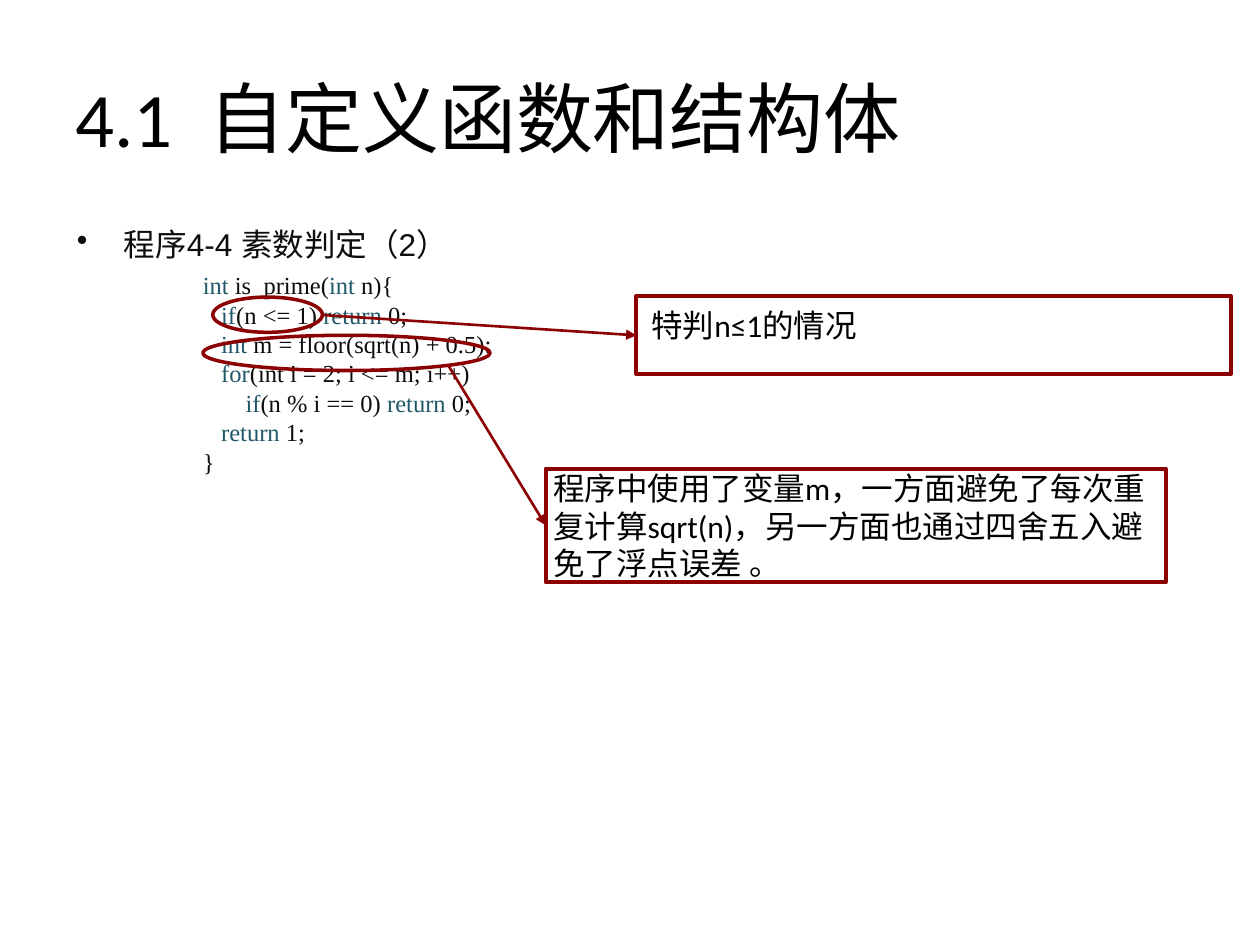
import pptx
import pptx.util
import pptx.dml.color
import pptx.enum.shapes
import pptx.enum.text
import pptx.oxml
import pptx.oxml.ns
from pptx.util import Cm

BLACK, INK, KEYWORD, MARK = "000000", "0D0D0D", "215968", "8C0202"

# Each code line: left margin in cm, then (text, colour) spans
CODE = [
    (2.54, [("int ", KEYWORD), ("is_prime(", INK), ("int", KEYWORD), (" n){", INK)]),
    (2.91, [("if", KEYWORD), ("(n <= 1) ", INK), ("return", KEYWORD), (" 0;", INK)]),
    (2.91, [("int ", KEYWORD), ("m = floor(sqrt(n) + 0.5);", INK)]),
    (2.91, [("for", KEYWORD), ("(int i = 2; i <= m; i++)", INK)]),
    (3.4, [("if", KEYWORD), ("(n % i == 0) ", INK), ("return", KEYWORD), (" 0;", INK)]),
    (2.91, [("return ", KEYWORD), ("1;", INK)]),
    (2.54, [("}", INK)]),
]


def colour(value):
    return pptx.dml.color.RGBColor.from_string(value)


def format_span(span, font, size, value):
    span.font.name = font
    span.font.size = pptx.util.Pt(size)
    span.font.color.rgb = colour(value)


def add_child(parent, tag, **attributes):
    child = pptx.oxml.ns.qn(tag)
    element = parent.makeelement(child, attributes)
    parent.append(element)
    return element


def set_indent(para, left, first=0):
    properties = para._p.get_or_add_pPr()
    properties.set("marL", str(Cm(left)))
    properties.set("indent", str(Cm(first)))
    return properties


def set_title(page, text):
    title = page.shapes.title
    title.left, title.top, title.width, title.height = Cm(1.27), Cm(0.76), Cm(22.86), Cm(3.18)
    title.text_frame.text = text
    title.text_frame.vertical_anchor = pptx.enum.text.MSO_ANCHOR.MIDDLE
    para = title.text_frame.paragraphs[0]
    para.alignment = pptx.enum.text.PP_ALIGN.LEFT
    format_span(para.runs[0], "Calibri", 44, BLACK)


def add_listing(page, heading, code):
    box = page.shapes.add_textbox(Cm(1.3), Cm(4.42), Cm(22.86), Cm(12.57))
    frame = box.text_frame
    frame.word_wrap = True
    # Bulleted heading
    frame.text = heading
    para = frame.paragraphs[0]
    format_span(para.runs[0], "Arial", 18, INK)
    add_child(set_indent(para, 0.95, -0.95), "a:buChar", char="•")
    # Code lines
    for number, (left, spans) in enumerate(code):
        para = frame.add_paragraph()
        para.line_spacing = pptx.util.Pt(16.8)
        para.space_before = pptx.util.Pt(0 if number else 4)
        set_indent(para, left)
        for text, value in spans:
            span = para.add_run()
            span.text = text
            format_span(span, "Times New Roman", 14, value)


def add_outline(page, kind, place, weight):
    shape = page.shapes.add_shape(kind, *[Cm(length) for length in place])
    shape.shadow.inherit = False
    shape.fill.background()
    shape.line.color.rgb = colour(MARK)
    shape.line.width = pptx.util.Pt(weight)
    return shape


def add_arrow(page, start, end):
    arrow = page.shapes.add_connector(
        pptx.enum.shapes.MSO_CONNECTOR.STRAIGHT, *[Cm(length) for length in start + end])
    arrow.line.color.rgb = colour(MARK)
    arrow.line.width = pptx.util.Pt(1.5)
    add_child(arrow.line._get_or_add_ln(), "a:tailEnd", type="triangle")
    add_child(arrow._element.spPr, "a:effectLst")


def add_note(page, text, place, side, top):
    box = add_outline(page, pptx.enum.shapes.MSO_SHAPE.RECTANGLE, place, 2.25)
    frame = box.text_frame
    frame.word_wrap = True
    frame.vertical_anchor = pptx.enum.text.MSO_ANCHOR.TOP
    frame.margin_left = frame.margin_right = Cm(side)
    frame.margin_top, frame.margin_bottom = Cm(top), Cm(0)
    frame.text = text
    para = frame.paragraphs[0]
    para.alignment = pptx.enum.text.PP_ALIGN.LEFT
    format_span(para.runs[0], "Calibri", 18, BLACK)


def main():
    deck = pptx.Presentation()
    deck.slide_width, deck.slide_height = Cm(25.4), Cm(19.05)
    page = deck.slides.add_slide(deck.slide_layouts[5])
    set_title(page, "4.1  自定义函数和结构体")
    add_listing(page, "程序4-4 素数判定（2）", CODE)

    # Special case n <= 1
    oval = pptx.enum.shapes.MSO_SHAPE.OVAL
    add_outline(page, oval, (4.29, 5.99, 2.21, 0.71), 2)
    add_arrow(page, (6.5, 6.35), (12.83, 6.76))
    add_note(page, "特判n≤1的情况", (12.83, 5.97, 11.99, 1.57), 0.3, 0.2)

    # Square root kept in m
    add_outline(page, oval, (4.09, 6.76, 5.79, 0.71), 2)
    add_arrow(page, (9.04, 7.37), (11, 10.59))
    add_note(page, "程序中使用了变量m，一方面避免了每次重复计算sqrt(n)，另一方面也通过四舍五入避免了浮点误差 。",
             (11, 9.45, 12.5, 2.29), 0.15, 0)
    deck.save("out.pptx")


if __name__ == "__main__":
    main()
